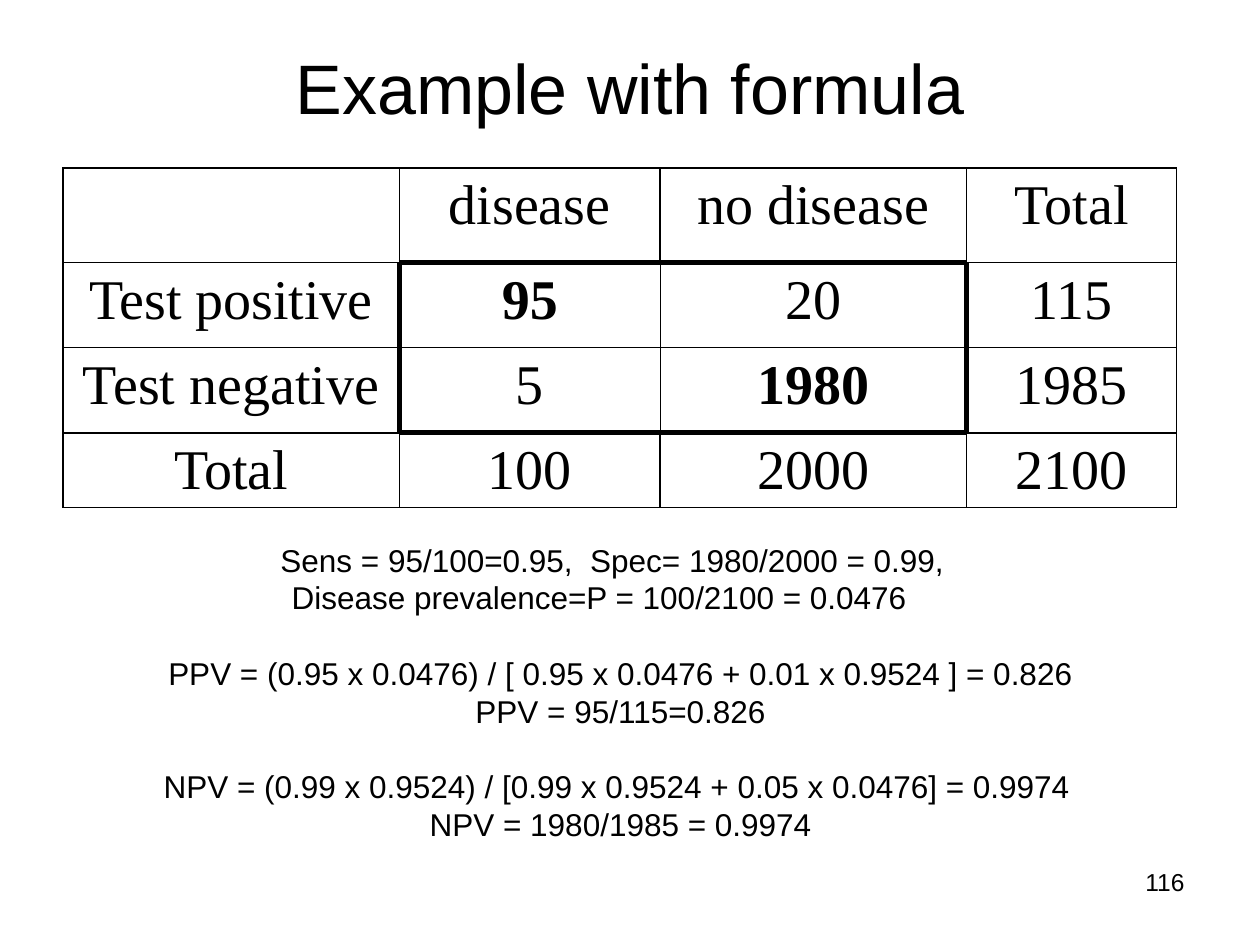
from lxml import etree
from pptx import Presentation, util as u
from pptx.dml.color import RGBColor
from pptx.enum import text as t
from pptx.oxml import ns

WIDTH, HEIGHT = u.Inches(10), u.Inches(7.5)
BLACK = "000000"
ROWS = [
    ["", "disease", "no disease", "Total"],
    ["Test positive", "95", "20", "115"],
    ["Test negative", "5", "1980", "1985"],
    ["Total", "100", "2000", "2100"],
]
COLUMN_SHARES = [0.267, 0.207, 0.243, 0.167]
ROW_SHARES = [0.1, 0.09, 0.09, 0.078]
CORRECT_RESULTS = {(1, 1), (2, 2)}
SIDES = {"L": (0, -1), "R": (0, 1), "T": (-1, 0), "B": (1, 0)}
LINE = 21.6
FORMULAS = [
    ("Sens = 95/100=0.95,  Spec= 1980/2000 = 0.99,", 0.21, 0),
    ("Disease prevalence=P = 100/2100 = 0.0476", 0, 0),
    ("PPV = (0.95 x 0.0476) / [ 0.95 x 0.0476 + 0.01 x 0.9524 ] = 0.826", 0.34, LINE),
    ("PPV = 95/115=0.826", 0.34, 0),
    ("NPV = (0.99 x 0.9524) / [0.99 x 0.9524 + 0.05 x 0.0476] = 0.9974", 0.28, LINE),
    ("NPV = 1980/1985 = 0.9974", 0.34, 0),
]


def color(value):
    return RGBColor.from_string(value)


def area(left, top, width, height):
    return int(left * WIDTH), int(top * HEIGHT), int(width * WIDTH), int(height * HEIGHT)


def place(shape, *shares):
    shape.left, shape.top, shape.width, shape.height = area(*shares)


def write(paragraph, content, size=18, font="Arial", bold=False, align=t.PP_ALIGN.CENTER):
    paragraph.alignment = align
    run = paragraph.add_run()
    run.text = content
    run.font.name, run.font.size, run.font.bold = font, u.Pt(size), bold
    run.font.color.rgb = color(BLACK)


def prepare(frame, anchor):
    frame.word_wrap = True
    frame.auto_size = t.MSO_AUTO_SIZE.NONE
    frame.vertical_anchor = anchor


def add_title(slide):
    title = slide.shapes.title
    place(title, 0.05, 0.04, 0.9, 0.104)
    prepare(title.text_frame, t.MSO_ANCHOR.MIDDLE)
    write(title.text_frame.paragraphs[0], "Example with formula", size=40)


def in_core(row, column):
    return row in (1, 2) and column in (1, 2)


def border_width(row, column, side):
    down, across = SIDES[side]
    inside = in_core(row, column) + in_core(row + down, column + across)
    return (1, 3, 0.75)[inside]


def draw_borders(cell, row, column):
    properties = cell._tc.get_or_add_tcPr()
    for side in SIDES:
        line = etree.SubElement(properties, ns.qn(f"a:ln{side}"))
        line.set("w", str(u.Pt(border_width(row, column, side))))
        fill = etree.SubElement(line, ns.qn("a:solidFill"))
        etree.SubElement(fill, ns.qn("a:srgbClr")).set("val", BLACK)


def add_results_table(slide):
    bounds = area(0.05, 0.178, sum(COLUMN_SHARES), sum(ROW_SHARES))
    table = slide.shapes.add_table(len(ROWS), len(ROWS[0]), *bounds).table
    table.first_row = table.horz_banding = False
    for column, share in zip(table.columns, COLUMN_SHARES):
        column.width = int(share * WIDTH)
    for row, share in zip(table.rows, ROW_SHARES):
        row.height = int(share * HEIGHT)
    for i, values in enumerate(ROWS):
        for j, value in enumerate(values):
            cell = table.cell(i, j)
            draw_borders(cell, i, j)
            cell.fill.background()
            if value:
                write(cell.text_frame.paragraphs[0], value, size=32,
                      font="Times New Roman", bold=(i, j) in CORRECT_RESULTS)


def set_indent(paragraph, inches):
    properties = paragraph._p.get_or_add_pPr()
    properties.set("marL", str(u.Inches(inches)))
    properties.set("indent", "0")
    etree.SubElement(properties, ns.qn("a:buNone"))


def add_formulas(slide):
    body = slide.placeholders[1]
    place(body, 0.058, 0.565, 0.835, 0.334)
    frame = body.text_frame
    prepare(frame, t.MSO_ANCHOR.MIDDLE)
    for i, (formula, indent, gap) in enumerate(FORMULAS):
        paragraph = frame.add_paragraph() if i else frame.paragraphs[0]
        paragraph.line_spacing = u.Pt(LINE)
        paragraph.space_before = u.Pt(gap)
        set_indent(paragraph, indent)
        write(paragraph, formula)


def add_page_number(slide):
    box = slide.shapes.add_textbox(*area(0.717, 0.911, 0.233, 0.069))
    prepare(box.text_frame, t.MSO_ANCHOR.TOP)
    write(box.text_frame.paragraphs[0], "116", size=14, align=t.PP_ALIGN.RIGHT)


def main():
    presentation = Presentation()
    presentation.slide_width, presentation.slide_height = WIDTH, HEIGHT
    slide = presentation.slides.add_slide(presentation.slide_layouts[1])
    add_title(slide)
    add_results_table(slide)
    add_formulas(slide)
    add_page_number(slide)
    presentation.save("out.pptx")


if __name__ == "__main__":
    main()
